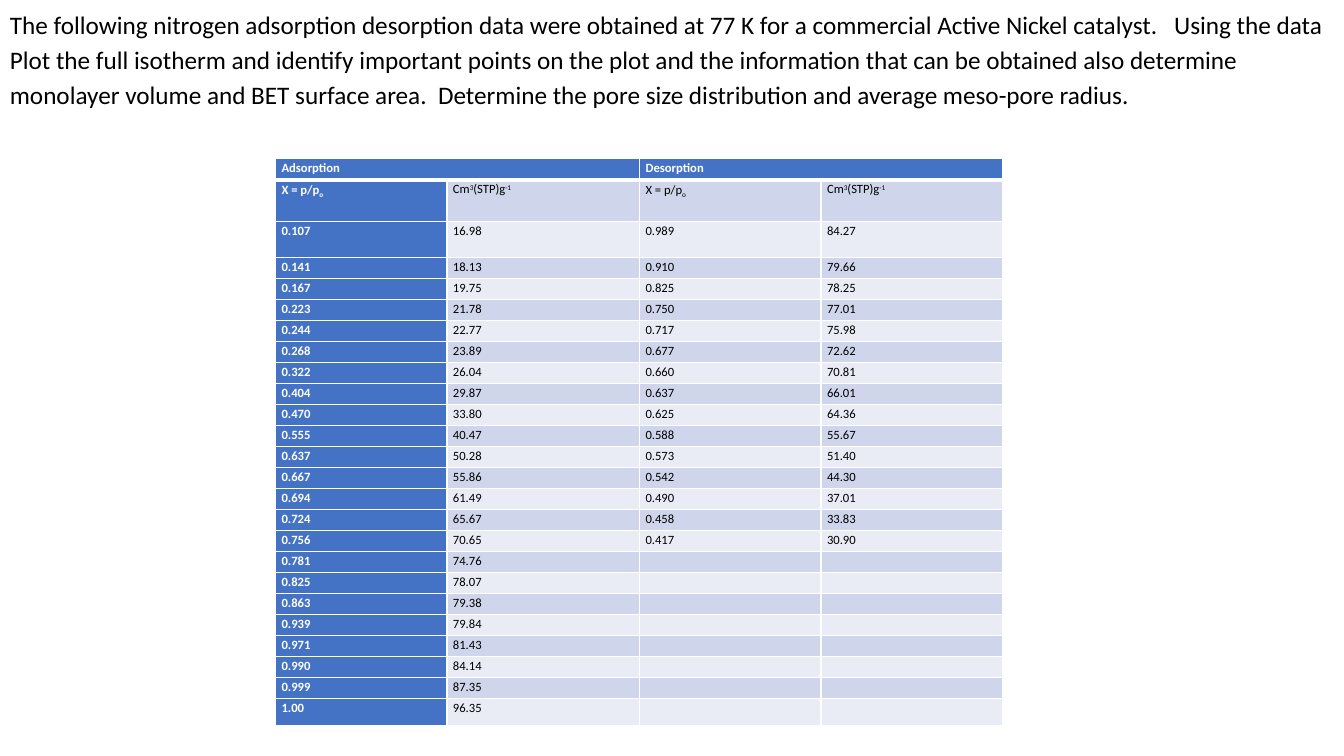
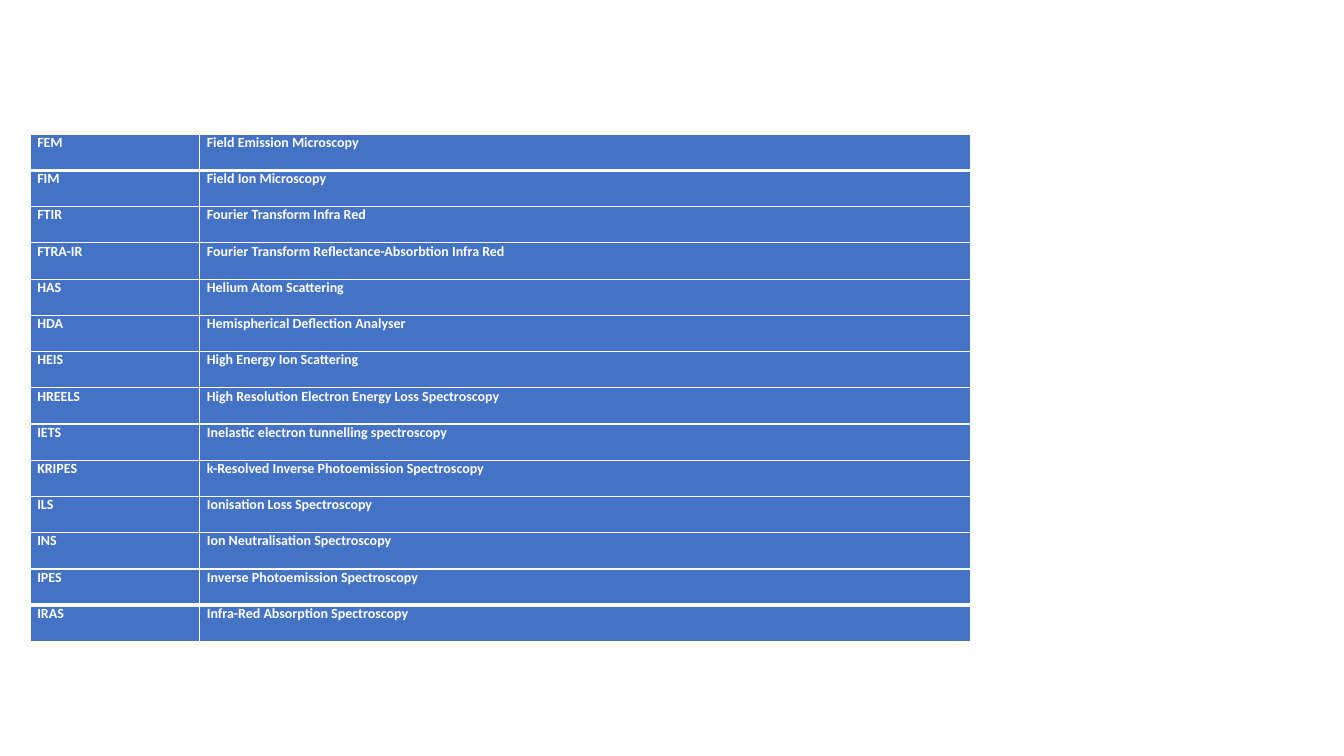
from dataclasses import dataclass
from itertools import zip_longest
from typing import Optional

from lxml.etree import SubElement
from pptx import Presentation
from pptx.dml.color import RGBColor
from pptx.enum.text import MSO_AUTO_SIZE, PP_ALIGN
from pptx.oxml.ns import qn
from pptx.util import Inches, Pt

# Shared look
FONT = "Calibri"
BLUE, WHITE, BLACK = "4472C4", "FFFFFF", "000000"
BANDS = ("CFD5EA", "E9EBF5")
THIN, THICK = 1, 3
SLIDE_WIDTH, SLIDE_HEIGHT = Inches(13.33), Inches(7.5)


@dataclass(frozen=True)
class Span:
    text: str
    baseline: int = 0  # percent: above zero is raised, below is lowered


@dataclass(frozen=True)
class Area:
    """A place on the slide, in percent of its width and height."""
    left: float
    top: float
    width: float
    height: float

    def lengths(self) -> tuple[int, int, int, int]:
        return (int(SLIDE_WIDTH * self.left / 100), int(SLIDE_HEIGHT * self.top / 100),
                int(SLIDE_WIDTH * self.width / 100), int(SLIDE_HEIGHT * self.height / 100))


@dataclass(frozen=True)
class CellStyle:
    fill: str
    color: str
    bold: bool


@dataclass(frozen=True)
class TableStyle:
    size: float
    side_margin: float
    thick_rules: tuple[int, ...]  # numbers of the rows with a thick rule above
    line_spacing: Optional[float] = None
    align: Optional[PP_ALIGN] = None


Content = tuple[Span, ...]
STRONG = CellStyle(BLUE, WHITE, True)

# Contents
QUESTION = (
    "The following nitrogen adsorption desorption data were obtained at 77 K for a commercial "
    "Active Nickel catalyst.   Using the data Plot the full isotherm and identify important points "
    "on the plot and the information that can be obtained also determine monolayer volume and "
    "BET surface area.  Determine the pore size distribution and average meso-pore radius."
)
PRESSURE = (Span("X = p/p"), Span("o", -25))
VOLUME = (Span("Cm"), Span("3", 30), Span("(STP)g"), Span("-1", 30))
ADSORPTION = (
    ("0.107", "16.98"), ("0.141", "18.13"), ("0.167", "19.75"), ("0.223", "21.78"),
    ("0.244", "22.77"), ("0.268", "23.89"), ("0.322", "26.04"), ("0.404", "29.87"),
    ("0.470", "33.80"), ("0.555", "40.47"), ("0.637", "50.28"), ("0.667", "55.86"),
    ("0.694", "61.49"), ("0.724", "65.67"), ("0.756", "70.65"), ("0.781", "74.76"),
    ("0.825", "78.07"), ("0.863", "79.38"), ("0.939", "79.84"), ("0.971", "81.43"),
    ("0.990", "84.14"), ("0.999", "87.35"), ("1.00", "96.35"),
)
DESORPTION = (
    ("0.989", "84.27"), ("0.910", "79.66"), ("0.825", "78.25"), ("0.750", "77.01"),
    ("0.717", "75.98"), ("0.677", "72.62"), ("0.660", "70.81"), ("0.637", "66.01"),
    ("0.625", "64.36"), ("0.588", "55.67"), ("0.573", "51.40"), ("0.542", "44.30"),
    ("0.490", "37.01"), ("0.458", "33.83"), ("0.417", "30.90"),
)
TECHNIQUES = (
    ("FEM", "Field Emission Microscopy"),
    ("FIM", "Field Ion Microscopy"),
    ("FTIR", "Fourier Transform Infra Red"),
    ("FTRA-IR", "Fourier Transform Reflectance-Absorbtion Infra Red"),
    ("HAS", "Helium Atom Scattering"),
    ("HDA", "Hemispherical Deflection Analyser"),
    ("HEIS", "High Energy Ion Scattering"),
    ("HREELS", "High Resolution Electron Energy Loss Spectroscopy"),
    ("IETS", "Inelastic electron tunnelling spectroscopy"),
    ("KRIPES", "k-Resolved Inverse Photoemission Spectroscopy"),
    ("ILS", "Ionisation Loss Spectroscopy"),
    ("INS", "Ion Neutralisation Spectroscopy"),
    ("IPES", "Inverse Photoemission Spectroscopy"),
    ("IRAS", "Infra-Red Absorption Spectroscopy"),
)


def rgb(color: str) -> RGBColor:
    return RGBColor.from_string(color)


def plain(*texts: str) -> tuple[Content, ...]:
    return tuple((Span(text),) if text else () for text in texts)


def add_span(para, span: Span, size: float, color: str, bold: bool = False) -> None:
    run = para.add_run()
    run.text = span.text
    run.font.name = FONT
    run.font.size = Pt(size)
    run.font.bold = bold
    run.font.color.rgb = rgb(color)
    if span.baseline:
        run.font._element.set("baseline", str(span.baseline * 1000))


def set_borders(cell, above: float, below: float) -> None:
    properties = cell._tc.get_or_add_tcPr()
    for tag, points in (("lnL", THIN), ("lnR", THIN), ("lnT", above), ("lnB", below)):
        line = SubElement(properties, qn(f"a:{tag}"), w=str(Pt(points)))
        SubElement(SubElement(line, qn("a:solidFill")), qn("a:srgbClr"), val=WHITE)


def fill_cell(cell, content: Content, look: CellStyle, style: TableStyle) -> None:
    cell.fill.solid()
    cell.fill.fore_color.rgb = rgb(look.fill)
    cell.margin_left = cell.margin_right = Inches(style.side_margin)
    cell.margin_top = cell.margin_bottom = 0
    para = cell.text_frame.paragraphs[0]
    para.line_spacing = style.line_spacing
    para.alignment = style.align
    for span in content:
        add_span(para, span, style.size, look.color, look.bold)
    if not content:  # keeps an empty row as low as a filled one
        SubElement(para._p, qn("a:endParaRPr"), sz=str(int(style.size * 100)))


def isotherm_look(row: int, column: int) -> CellStyle:
    if row == 0 or column == 0:
        return STRONG
    return CellStyle(BANDS[(row - 1) % 2], BLACK, False)


def technique_look(row: int, column: int) -> CellStyle:
    return STRONG


def draw_table(page, area: Area, rows, column_shares, row_shares, style: TableStyle, look):
    left, top, width, height = area.lengths()
    frame = page.shapes.add_table(len(rows), len(column_shares), left, top, width, height)
    table = frame.table
    table.first_row = table.horz_banding = False
    for column, share in zip(table.columns, column_shares):
        column.width = int(width * share / sum(column_shares))
    for row, share in zip(table.rows, row_shares):
        row.height = int(height * share / sum(row_shares))
    rules = [THICK if row in style.thick_rules else THIN for row in range(len(rows) + 1)]
    for row, contents in enumerate(rows):
        for column, content in enumerate(contents):
            cell = table.cell(row, column)
            set_borders(cell, rules[row], rules[row + 1])
            fill_cell(cell, content, look(row, column), style)
    return table


def draw_question(page) -> None:
    box = page.shapes.add_textbox(*Area(0, 0, 100, 15.33).lengths())
    box.text_frame.word_wrap = True
    box.text_frame.auto_size = MSO_AUTO_SIZE.SHAPE_TO_FIT_TEXT
    para = box.text_frame.paragraphs[0]
    para.line_spacing = 1.15
    para.space_after = Pt(10)
    add_span(para, Span(QUESTION), 18, BLACK)


def draw_isotherm(page) -> None:
    readings = [plain(*adsorbed, *desorbed) for adsorbed, desorbed
                in zip_longest(ADSORPTION, DESORPTION, fillvalue=("", ""))]
    rows = [plain("Adsorption", "", "Desorption", ""), (PRESSURE, VOLUME) * 2, *readings]
    row_shares = [1, 2, 1.7] + [1] * (len(rows) - 4) + [1.3]
    style = TableStyle(9, 0.06, thick_rules=(1,), line_spacing=1.15)
    table = draw_table(page, Area(20.5, 21, 54.1, 75), rows, (1.7, 1.91, 1.8, 1.8),
                       row_shares, style, isotherm_look)
    for column in (0, 2):
        table.cell(0, column).merge(table.cell(0, column + 1))


def draw_techniques(page) -> None:
    rows = [plain(*technique) for technique in TECHNIQUES]
    style = TableStyle(10, 0.07, thick_rules=(1, len(rows) - 1), align=PP_ALIGN.JUSTIFY)
    draw_table(page, Area(2.25, 17.75, 70, 67.1), rows, (1.68, 7.64),
               [1] * len(rows), style, technique_look)


def main() -> None:
    deck = Presentation()
    deck.slide_width, deck.slide_height = SLIDE_WIDTH, SLIDE_HEIGHT
    blank = deck.slide_layouts[6]

    # Isotherm exercise
    page = deck.slides.add_slide(blank)
    draw_question(page)
    draw_isotherm(page)

    # List of techniques
    draw_techniques(deck.slides.add_slide(blank))

    deck.save("out.pptx")


if __name__ == "__main__":
    main()
